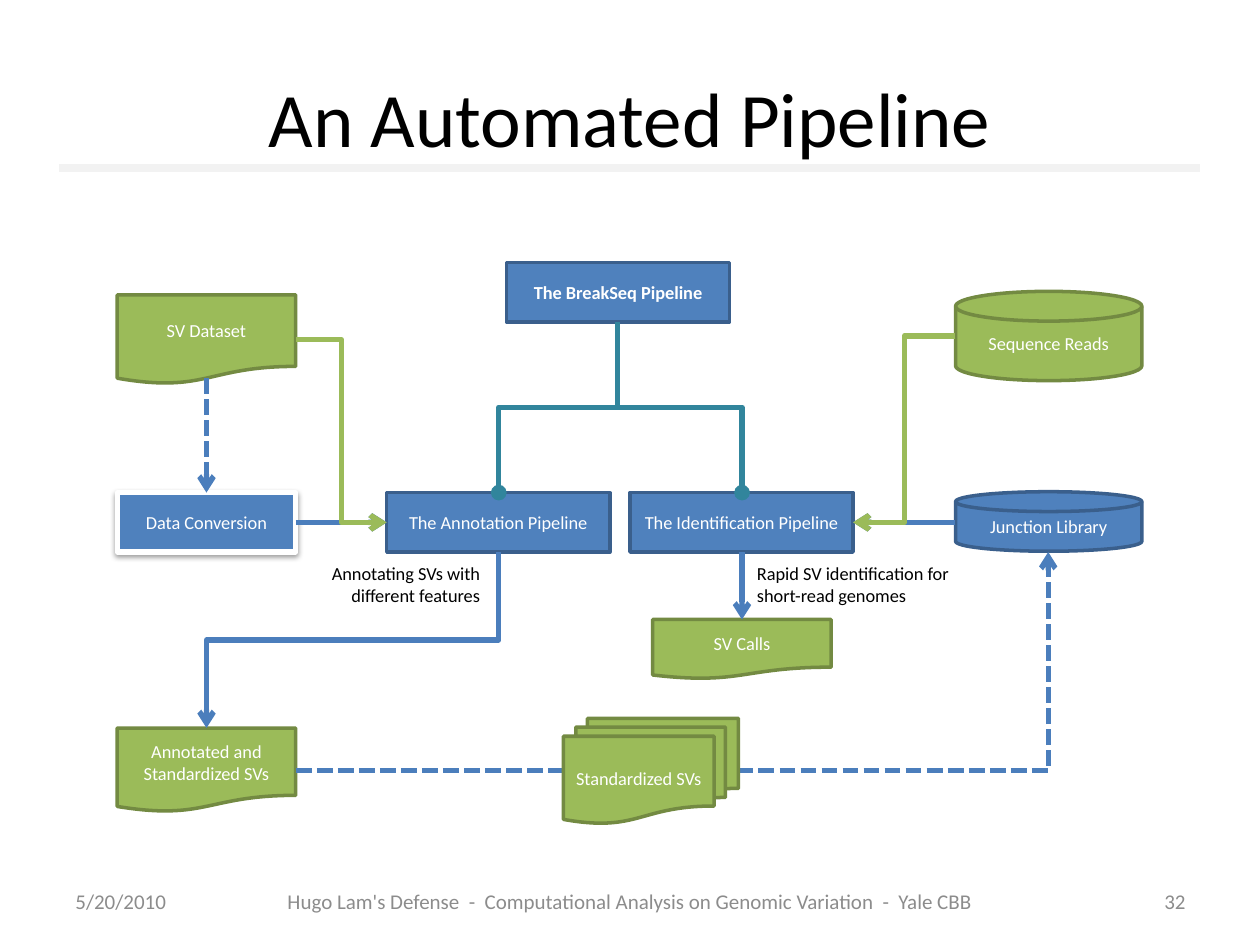
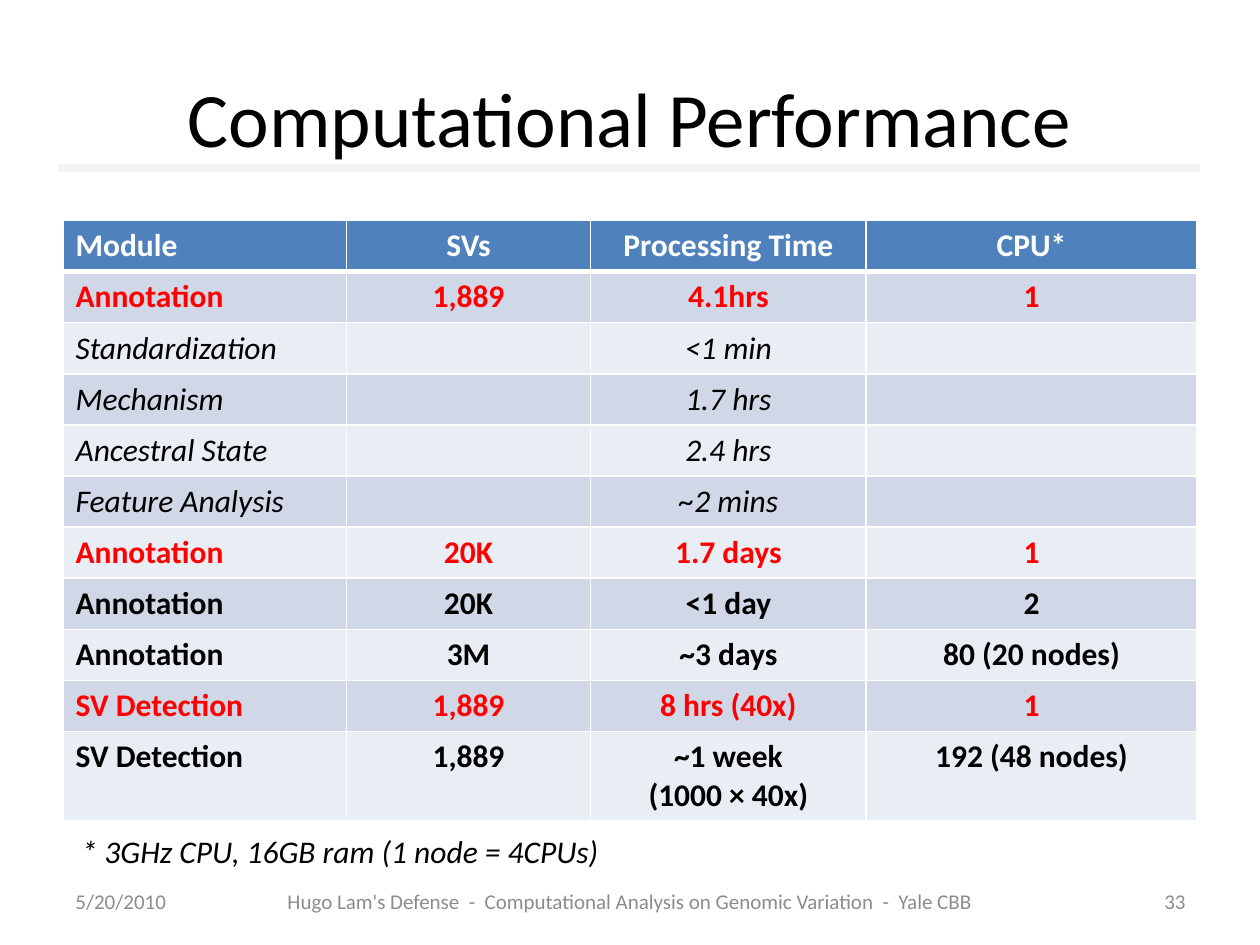
import pptx
import pptx.util
import pptx.dml.color
import pptx.enum.dml
import pptx.enum.shapes
import pptx.enum.text
import pptx.oxml
import pptx.oxml.ns

Pt = pptx.util.Pt
RGB = pptx.dml.color.RGBColor
SHAPE = pptx.enum.shapes.MSO_SHAPE
LINK = pptx.enum.shapes.MSO_CONNECTOR
ALIGN = pptx.enum.text.PP_ALIGN
ANCHOR = pptx.enum.text.MSO_ANCHOR
SYS_DASH = pptx.enum.dml.MSO_LINE.SQUARE_DOT

# Colours
WHITE = RGB(0xFF, 0xFF, 0xFF)
BLACK = RGB(0, 0, 0)
RED = RGB(0xFF, 0, 0)
GREY = RGB(0x8C, 0x8C, 0x8C)
RULE = RGB(0xF2, 0xF2, 0xF2)
BLUE = RGB(0x4F, 0x81, 0xBD)
BLUE_EDGE = RGB(0x3A, 0x5F, 0x8C)
BLUE_LINK = RGB(0x4B, 0x7E, 0xBC)
GREEN = RGB(0x9B, 0xBB, 0x59)
GREEN_EDGE = RGB(0x73, 0x8A, 0x42)
TEAL = RGB(0x31, 0x85, 0x9C)
BAND_DARK = RGB(0xD0, 0xD8, 0xE8)
BAND_LIGHT = RGB(0xE9, 0xED, 0xF4)

# Text formats
TITLE = {"size": Pt(44)}
FOOTER = {"size": Pt(12)}
LABEL = {"size": Pt(10.5)}
LABEL_BOLD = {**LABEL, "bold": True}
CELL = {"size": Pt(18)}
CELL_BOLD = {**CELL, "bold": True}
CELL_ITALIC = {**CELL, "italic": True}

FOOTER_TEXT = "Hugo Lam's Defense  -  Computational Analysis on Genomic Variation  -  Yale CBB"
DATE = "5/20/2010"


def xml(tag, content="", **attrs):
    """Make a DrawingML element."""
    values = " ".join(f'{name}="{value}"' for name, value in attrs.items())
    ns = pptx.oxml.ns.nsdecls("a")
    return pptx.oxml.parse_xml(f"<a:{tag} {ns} {values}>{content}</a:{tag}>")


def write(tf, text, style, color, align=ALIGN.LEFT):
    """Fill a text frame, one paragraph per line of text."""
    for i, line in enumerate(text.split("\n")):
        p = tf.paragraphs[0] if i == 0 else tf.add_paragraph()
        p.alignment = align
        r = p.add_run()
        r.text = line
        for name, value in {"name": "Calibri", **style}.items():
            setattr(r.font, name, value)
        r.font.color.rgb = color


def add_text(s, box, text, style, color, align=ALIGN.LEFT, anchor=ANCHOR.TOP, wrap=True):
    tf = s.shapes.add_textbox(*map(Pt, box)).text_frame
    tf.word_wrap = wrap
    tf.vertical_anchor = anchor
    write(tf, text, style, color, align)


def add_node(s, kind, box, text, fill, edge, style=LABEL, width=2):
    sp = s.shapes.add_shape(kind, *map(Pt, box))
    sp.shadow.inherit = False
    sp.fill.solid()
    sp.fill.fore_color.rgb = fill
    sp.line.color.rgb = edge
    sp.line.width = Pt(width)
    tf = sp.text_frame
    tf.word_wrap = True
    tf.vertical_anchor = ANCHOR.MIDDLE
    tf.margin_left = tf.margin_right = Pt(4)
    write(tf, text, style, WHITE, ALIGN.CENTER)
    return sp


def add_link(s, start, end, color, kind=LINK.STRAIGHT, width=3, tail="arrow", dash=None):
    cn = s.shapes.add_connector(kind, *map(Pt, start + end))
    cn.line.color.rgb = color
    cn.line.width = Pt(width)
    if dash:
        cn.line.dash_style = dash
    if tail:
        cn.line._get_or_add_ln().append(xml("tailEnd", type=tail))
    cn.element.spPr.append(xml("effectLst"))
    return cn


def add_drop(s, start, end, color, tail="arrow"):
    """Elbow that runs down, across, then down: a turned horizontal elbow."""
    cn = add_link(s, start, end, color, LINK.ELBOW, tail=tail)
    dx, dy = end[0] - start[0], end[1] - start[1]
    mid_x, mid_y = (start[0] + end[0]) / 2, (start[1] + end[1]) / 2
    cn.width, cn.height = Pt(dy), Pt(abs(dx))
    cn.left, cn.top = Pt(mid_x - dy / 2), Pt(mid_y - abs(dx) / 2)
    xfrm = cn.element.spPr.xfrm
    xfrm.flipH = dx > 0
    xfrm.set("rot", str((270 if dx > 0 else 90) * 60000))


def add_frame(prs, title, number):
    """Start a slide with the shared title, rule and footers."""
    s = prs.slides.add_slide(prs.slide_layouts[6])
    add_link(s, (34, 96), (686, 96), RULE, width=5, tail=None)
    add_text(s, (36, 21.6, 648, 90), title, TITLE, BLACK, ALIGN.CENTER, ANCHOR.MIDDLE)
    for left, width, text, align in [
        (36, 73.5, DATE, ALIGN.LEFT),
        (118, 484, FOOTER_TEXT, ALIGN.CENTER),
        (611, 73.5, str(number), ALIGN.RIGHT),
    ]:
        add_text(s, (left, 500.5, width, 28.5), text, FOOTER, GREY, align, ANCHOR.MIDDLE)
    return s


def build_pipeline(prs):
    s = add_frame(prs, "An Automated Pipeline", 32)
    doc, disk = SHAPE.FLOWCHART_DOCUMENT, SHAPE.FLOWCHART_MAGNETIC_DISK
    row_top, row_mid, row_bottom = 281.5, 298.5, 315.5
    data_x, annotation_x, identification_x, library_x = 118, 285, 424, 599

    # Pipeline steps
    for left, top, text, style in [
        (221, row_top, "The Annotation Pipeline", LABEL),
        (360, row_top, "The Identification Pipeline", LABEL),
        (289.5, 150, "The BreakSeq Pipeline", LABEL_BOLD),
    ]:
        add_node(s, SHAPE.RECTANGLE, (left, top, 127.5, 34), text, BLUE, BLUE_EDGE, style)
    conversion = add_node(s, SHAPE.RECTANGLE, (67, row_top, 102, 34), "Data Conversion",
                          BLUE, WHITE, width=3)
    shade = '<a:srgbClr val="000000"><a:alpha val="38000"/></a:srgbClr>'
    conversion.element.spPr.find(pptx.oxml.ns.qn("a:effectLst")).append(
        xml("outerShdw", shade, blurRad=Pt(3.1), dist=Pt(1.6), dir=5400000, rotWithShape=0))

    # Data stores
    for kind, box, text in [
        (doc, (67, 168.5, 102, 51), "SV Dataset"),
        (doc, (67, 416, 102, 48), "Annotated and Standardized SVs"),
        (doc, (373, 354, 102, 34), "SV Calls"),
        (disk, (546, 166.5, 106.5, 51), "Sequence Reads"),
    ]:
        add_node(s, kind, box, text, GREEN, GREEN_EDGE)
    add_node(s, disk, (546, 281, 106.5, 34), "Junction Library", BLUE, BLUE_EDGE)

    # Links
    for x in (annotation_x, identification_x):
        add_drop(s, (353, 184), (x, row_top), TEAL, "oval")
    add_drop(s, (annotation_x, row_bottom), (data_x, 416), BLUE_LINK)
    add_link(s, (data_x, 216), (data_x, row_top), BLUE_LINK, dash=SYS_DASH)
    for start, end in [
        ((169, row_mid), (221, row_mid)),
        ((546, row_mid), (487.5, row_mid)),
        ((identification_x, row_bottom), (identification_x, 354)),
    ]:
        add_link(s, start, end, BLUE_LINK)
    add_link(s, (169, 194), (221, row_mid), GREEN, LINK.ELBOW)
    add_link(s, (546, 192), (487.5, row_mid), GREEN, LINK.ELBOW)
    corner = add_link(s, (169, 440.5), (library_x, row_bottom), BLUE_LINK, LINK.ELBOW,
                      dash=SYS_DASH)
    corner.element.spPr.prstGeom.set("prst", "bentConnector2")
    add_node(s, SHAPE.FLOWCHART_MULTIDOCUMENT, (322, 410.5, 100, 60), "Standardized SVs",
             GREEN, GREEN_EDGE)

    # Remarks
    add_text(s, (157.5, 317.5, 124, 32.5), "Annotating SVs with different features",
             LABEL, BLACK, ALIGN.RIGHT)
    add_text(s, (425.5, 317.5, 124, 32.5), "Rapid SV identification for short-read genomes",
             LABEL, BLACK)


def add_cell(cell, text, fill, style, color, align, top=1, bottom=1):
    tc_pr = cell._tc.get_or_add_tcPr()
    white = '<a:solidFill><a:srgbClr val="FFFFFF"/></a:solidFill>'
    for side, width in {"L": 1, "R": 1, "T": top, "B": bottom}.items():
        tc_pr.append(xml("ln" + side, white, w=Pt(width)))
    cell.fill.solid()
    cell.fill.fore_color.rgb = fill
    if text:
        write(cell.text_frame, text, style, color, align)


def build_performance(prs):
    s = add_frame(prs, "Computational Performance", 33)
    bold_red, bold_black = (CELL_BOLD, RED), (CELL_BOLD, BLACK)
    italic = (CELL_ITALIC, BLACK)
    rows = [
        ((CELL_BOLD, WHITE), "Module", "SVs", "Processing Time", "CPU*"),
        (bold_red, "Annotation", "1,889", "4.1hrs", "1"),
        (italic, "Standardization", "", "<1 min", ""),
        (italic, "Mechanism", "", "1.7 hrs", ""),
        (italic, "Ancestral State", "", "2.4 hrs", ""),
        (italic, "Feature Analysis", "", "~2 mins", ""),
        (bold_red, "Annotation", "20K", "1.7 days", "1"),
        (bold_black, "Annotation", "20K", "<1 day", "2"),
        (bold_black, "Annotation", "3M", "~3 days", "80 (20 nodes)"),
        (bold_red, "SV Detection", "1,889", "8 hrs (40x)", "1"),
        (bold_black, "SV Detection", "1,889", "~1 week\n(1000 × 40x)", "192 (48 nodes)"),
    ]
    widths = [162, 139.5, 157.5, 189]
    row_height, last_height = 29.2, 50.8
    height = row_height * (len(rows) - 1) + last_height
    table = s.shapes.add_table(len(rows), len(widths), Pt(36), Pt(126),
                               Pt(sum(widths)), Pt(height)).table
    table.first_row = table.horz_banding = False
    for column, width in zip(table.columns, widths):
        column.width = Pt(width)
    for i, ((style, color), *texts) in enumerate(rows):
        table.rows[i].height = Pt(last_height if i == len(rows) - 1 else row_height)
        fill = BLUE if i == 0 else BAND_DARK if i % 2 else BAND_LIGHT
        for j, text in enumerate(texts):
            add_cell(table.cell(i, j), text, fill, style, color,
                     ALIGN.CENTER if j else ALIGN.LEFT,
                     top=3 if i == 1 else 1, bottom=3 if i == 0 else 1)

    # Table footnote
    add_text(s, (39.6, 471.6, 325.5, 29), "* 3GHz CPU, 16GB ram (1 node = 4CPUs)",
             CELL_ITALIC, BLACK, wrap=False)


def main():
    prs = pptx.Presentation()
    prs.slide_width, prs.slide_height = Pt(720), Pt(540)
    build_pipeline(prs)
    build_performance(prs)
    prs.save("out.pptx")


if __name__ == "__main__":
    main()
